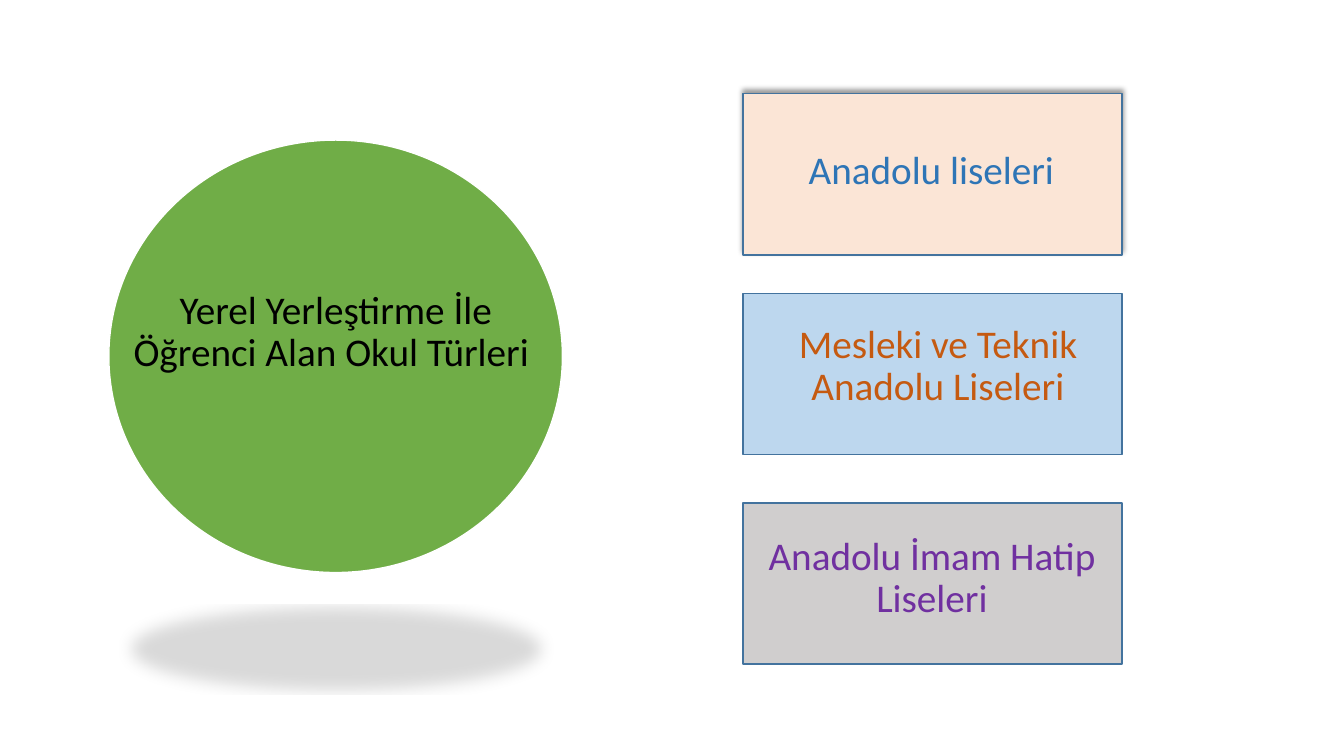
import pptx
import pptx.dml.color
import pptx.enum.shapes
import pptx.enum.text
import pptx.oxml
import pptx.oxml.ns
import pptx.util

RGBColor = pptx.dml.color.RGBColor
SHAPE = pptx.enum.shapes.MSO_SHAPE

BLACK = RGBColor(0x00, 0x00, 0x00)
WHITE = RGBColor(0xFF, 0xFF, 0xFF)
GREEN = RGBColor(0x70, 0xAD, 0x47)
BORDER = RGBColor(0x43, 0x73, 0x9E)
PEACH = RGBColor(0xFB, 0xE5, 0xD6)
SKY = RGBColor(0xBD, 0xD7, 0xEE)
GREY = RGBColor(0xD0, 0xCE, 0xCE)
BLUE = RGBColor(0x2E, 0x75, 0xB6)
ORANGE = RGBColor(0xC5, 0x5A, 0x11)
PURPLE = RGBColor(0x70, 0x30, 0xA0)


class Deck:
    """Boxes are (left, top, width, height) in percent of the slide's size."""
    font = "Calibri"
    size = pptx.util.Pt(28)

    def __init__(self):
        self.prs = pptx.Presentation()
        self.prs.slide_width = pptx.util.Inches(13.333)
        self.prs.slide_height = pptx.util.Inches(7.5)
        self.s = self.prs.slides.add_slide(self.prs.slide_layouts[6])

    def place(self, box):
        w, h = self.prs.slide_width, self.prs.slide_height
        return [round(share * side / 100) for share, side in zip(box, (w, h, w, h))]

    def shape(self, kind, box, fill, line):
        sp = self.s.shapes.add_shape(kind, *self.place(box))
        sp.shadow.inherit = False
        sp.fill.solid()
        sp.fill.fore_color.rgb = fill
        sp.line.color.rgb = line
        sp.line.width = pptx.util.Pt(1)
        return sp

    def shadow(self, sp, blur, dist, angle, alpha, sx=100, sy=100):
        """Blur and distance in points, angle in degrees, the rest in percent."""
        effects = sp._element.spPr.find(pptx.oxml.ns.qn("a:effectLst"))
        effects.append(pptx.oxml.parse_xml(
            f'<a:outerShdw {pptx.oxml.ns.nsdecls("a")} blurRad="{pptx.util.Pt(blur)}" '
            f'dist="{pptx.util.Pt(dist)}" dir="{angle * 60000}" '
            f'sx="{sx * 1000}" sy="{sy * 1000}" algn="b" rotWithShape="0">'
            f'<a:srgbClr val="{BLACK}"><a:alpha val="{alpha * 1000}"/></a:srgbClr>'
            '</a:outerShdw>'))

    def text(self, box, words, color, spacing=0.9):
        tf = self.s.shapes.add_textbox(*self.place(box)).text_frame
        tf.word_wrap = True
        p = tf.paragraphs[0]
        p.alignment = pptx.enum.text.PP_ALIGN.CENTER
        p.line_spacing = spacing
        p.space_before = pptx.util.Pt(10)
        r = p.add_run()
        r.text = words
        r.font.name = self.font
        r.font.size = self.size
        r.font.color.rgb = color


def main():
    deck = Deck()

    circle = deck.shape(SHAPE.OVAL, (8.1, 18.53, 33.75, 57.2), GREEN, WHITE)
    deck.shadow(circle, blur=12, dist=25, angle=90, alpha=15, sx=90, sy=-19)
    deck.text((8.7, 37.73, 32.55, 29.87),
              "Yerel Yerleştirme İle Öğrenci Alan Okul Türleri ", BLACK)

    cards = [deck.shape(SHAPE.RECTANGLE, (55.28, top, 28.2, 21.33), fill, BORDER)
             for top, fill in ((12.4, PEACH), (38.8, SKY), (66.53, GREY))]
    deck.shadow(cards[0], blur=4, dist=3, angle=270, alpha=40)

    deck.text((58.8, 19.73, 21, 6.67), "Anadolu liseleri", BLUE, spacing=0.8)
    deck.text((54.6, 42.27, 30.38, 15.47), "Mesleki ve Teknik Anadolu Liseleri", ORANGE)
    deck.text((54.45, 70.27, 29.78, 29.73), "Anadolu İmam Hatip Liseleri", PURPLE)

    deck.prs.save("out.pptx")


if __name__ == "__main__":
    main()
